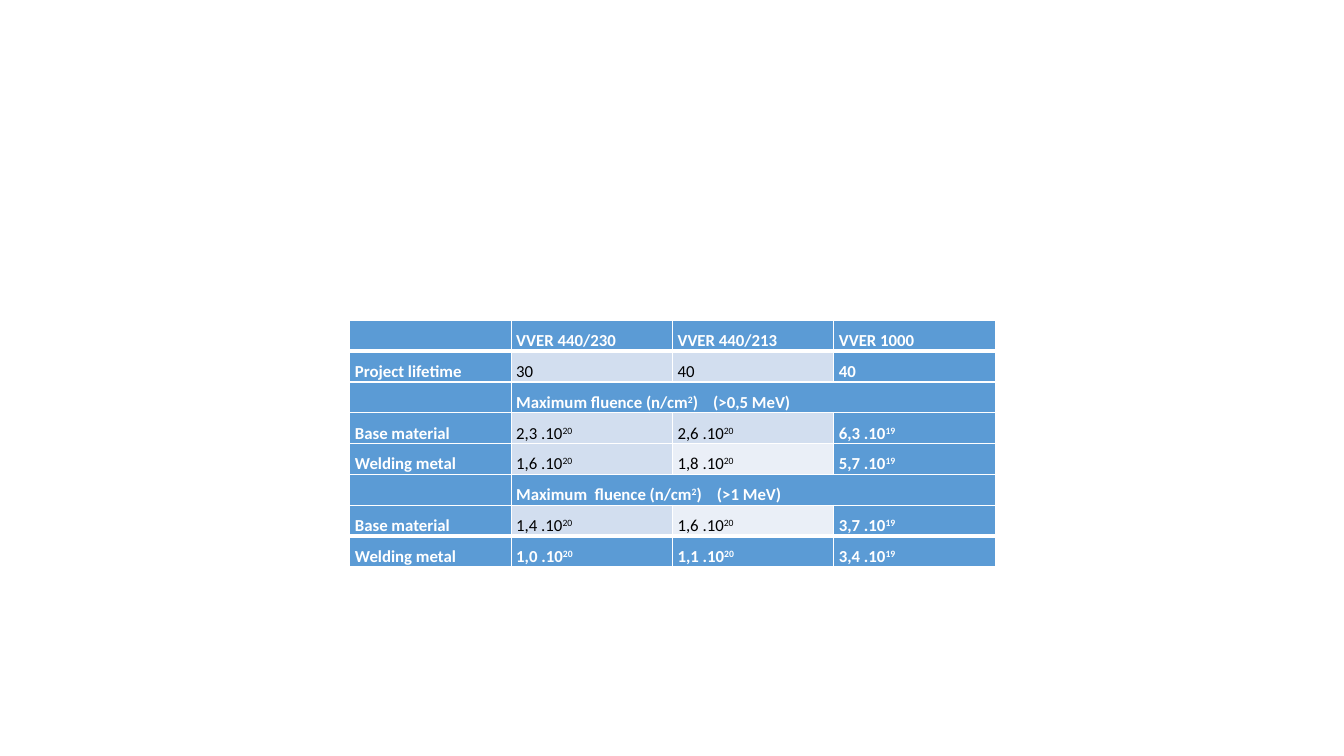
import pptx
import pptx.dml.color
import pptx.oxml.ns
import pptx.util
from lxml import etree

Inches, Pt = pptx.util.Inches, pptx.util.Pt
RGBColor = pptx.dml.color.RGBColor

BLUE = RGBColor(0x5B, 0x9B, 0xD5)
LIGHT = RGBColor(0xD2, 0xDE, 0xEF)
PALE = RGBColor(0xEA, 0xEF, 0xF7)
WHITE = RGBColor(0xFF, 0xFF, 0xFF)
BLACK = RGBColor(0x00, 0x00, 0x00)

# Text between carets is superscript.
ROWS = [
    ("", "VVER 440/230", "VVER 440/213", "VVER 1000"),
    ("Project lifetime", "30", "40", "40"),
    ("", "Maximum fluence (n/cm^2^)    (>0,5 MeV)", "", ""),
    ("Base material", "2,3 .10^20^", "2,6 .10^20^", "6,3 .10^19^"),
    ("Welding metal", "1,6 .10^20^", "1,8 .10^20^", "5,7 .10^19^"),
    ("", "Maximum  fluence (n/cm^2^)    (>1 MeV)", "", ""),
    ("Base material", "1,4 .10^20^", "1,6 .10^20^", "3,7 .10^19^"),
    ("Welding metal", "1,0 .10^20^", "1,1 .10^20^", "3,4 .10^19^"),
]
SPANNING_ROWS = (2, 5)
# Every other cell is blue.
BODY_FILLS = {
    (1, 1): LIGHT, (1, 2): LIGHT,
    (3, 1): LIGHT, (3, 2): LIGHT,
    (4, 1): LIGHT, (4, 2): PALE,
    (6, 1): LIGHT, (6, 2): PALE,
}
LEFT, TOP, COL_W, ROW_H = 3.47, 3.18, 1.6, 0.3
LAST = len(ROWS) - 1
THICK_EDGES = (1, LAST)  # row boundaries below the header and above the last row


def set_borders(cell, row):
    tc_pr = cell._tc.get_or_add_tcPr()
    widths = {
        "lnL": 1,
        "lnR": 1,
        "lnT": 3 if row in THICK_EDGES else 1,
        "lnB": 3 if row + 1 in THICK_EDGES else 1,
    }
    for tag, width in widths.items():
        ln = etree.SubElement(tc_pr, pptx.oxml.ns.qn("a:" + tag), w=str(Pt(width)))
        fill = etree.SubElement(ln, pptx.oxml.ns.qn("a:solidFill"))
        etree.SubElement(fill, pptx.oxml.ns.qn("a:srgbClr"), val=str(WHITE))


def write_text(cell, text, on_blue):
    p = cell.text_frame.paragraphs[0]
    p.line_spacing = 1.5
    for i, part in enumerate(text.split("^")):
        if not part:
            continue
        r = p.add_run()
        r.text = part
        r.font.name = "Calibri"
        r.font.size = Pt(12)
        r.font.bold = on_blue
        r.font.color.rgb = WHITE if on_blue else BLACK
        if i % 2:
            r._r.get_or_add_rPr().set("baseline", "30000")


prs = pptx.Presentation()
prs.slide_width, prs.slide_height = Inches(13.33), Inches(7.5)
s = prs.slides.add_slide(prs.slide_layouts[6])

n_cols = len(ROWS[0])
table = s.shapes.add_table(
    len(ROWS), n_cols, Inches(LEFT), Inches(TOP),
    Inches(COL_W * n_cols), Inches(ROW_H * len(ROWS))).table
table.horz_banding = False

for row, texts in enumerate(ROWS):
    table.rows[row].height = Inches(ROW_H)
    for col, text in enumerate(texts):
        cell = table.cell(row, col)
        cell.margin_left = cell.margin_right = Inches(0.05)
        cell.margin_top = cell.margin_bottom = 0
        set_borders(cell, row)
        fill = BODY_FILLS.get((row, col), BLUE)
        cell.fill.solid()
        cell.fill.fore_color.rgb = fill
        if text:
            write_text(cell, text, fill == BLUE)

for row in SPANNING_ROWS:
    table.cell(row, 1).merge(table.cell(row, n_cols - 1))

prs.save("out.pptx")
